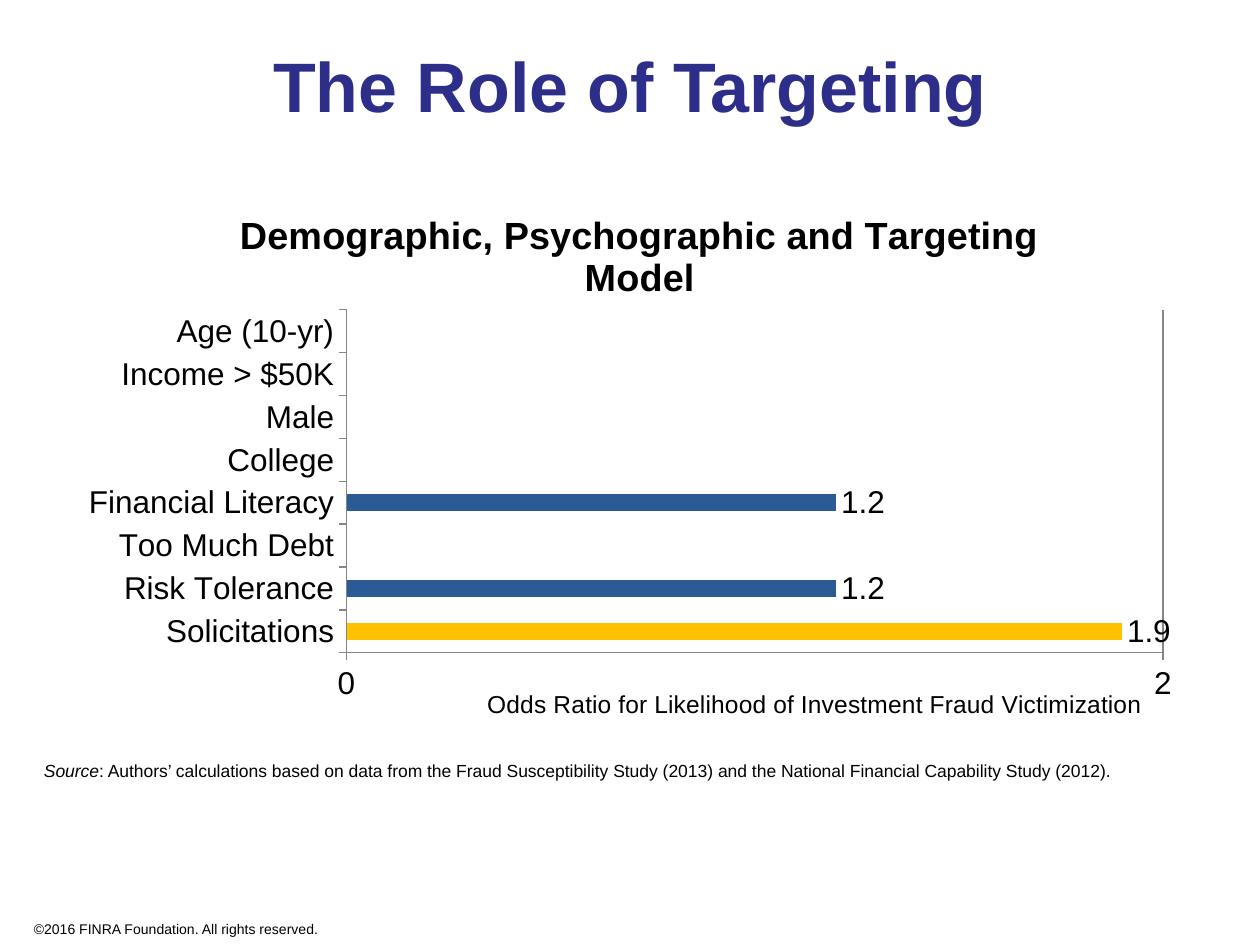
"""Build the slide on the role of targeting, with its odds ratio bar chart."""
from lxml.etree import SubElement
from pptx import Presentation
from pptx.chart.data import CategoryChartData as Data
from pptx.dml.color import RGBColor
from pptx.enum.chart import XL_CHART_TYPE as Kind, XL_LABEL_POSITION as Spot, XL_TICK_MARK as Tick
from pptx.enum.text import MSO_ANCHOR as Anchor, PP_ALIGN as Align
from pptx.oxml.ns import qn
from pptx.util import Inches, Pt

BLACK = RGBColor(0x00, 0x00, 0x00)
NAVY = RGBColor(0x2D, 0x2D, 0x8A)
BLUE = RGBColor(0x2B, 0x5B, 0x95)
GOLD = RGBColor(0xFF, 0xC0, 0x00)
PALE = RGBColor(0xBB, 0xE0, 0xE3)
GRAY = RGBColor(0x86, 0x86, 0x86)


def style(font, color=BLACK, **form):
    font.name = "Arial"
    font.color.rgb = color
    for key, val in form.items():
        setattr(font, key, val)


def place(node, index, **form):
    for old in node.findall(qn("c:layout")):
        node.remove(old)
    layout = SubElement(node, qn("c:layout"))
    node.insert(index, layout)
    manual = SubElement(layout, qn("c:manualLayout"))
    for key, val in form.items():
        SubElement(manual, qn(f"c:{key}")).set("val", str(val))


deck = Presentation()
deck.slide_width, deck.slide_height = Inches(10), Inches(7.5)
slide = deck.slides.add_slide(deck.slide_layouts[5])

title = slide.shapes.title
title.left, title.top, title.width, title.height = map(Inches, (0.5, 0.17, 9, 1))
title.text_frame.vertical_anchor = Anchor.MIDDLE
head = title.text_frame.paragraphs[0]
head.alignment = Align.CENTER
run = head.add_run()
run.text = "The Role of Targeting"
style(run.font, NAVY, size=Pt(40), bold=True)

odds = {
    "Solicitations": 1.9,
    "Risk Tolerance": 1.2,
    "Too Much Debt": None,
    "Financial Literacy": 1.2,
    "College": None,
    "Male": None,
    "Income > $50K": None,
    "Age (10-yr)": None,
}
data = Data()
data.categories = list(odds)
data.add_series("Series 1", list(odds.values()))
chart = slide.shapes.add_chart(
    Kind.BAR_CLUSTERED, Inches(0.5), Inches(1.42), Inches(9), Inches(4.95), data
).chart
style(chart.font, size=Pt(18))
chart.has_legend = False

cats, vals = chart.category_axis, chart.value_axis
vals.has_major_gridlines = True
for axis in (cats, vals):
    axis.major_tick_mark = Tick.OUTSIDE
    axis.minor_tick_mark = Tick.NONE
for line in (cats.format.line, vals.format.line, vals.major_gridlines.format.line):
    line.color.rgb = GRAY
    line.width = Pt(0.75)
for key, val in {"minimum_scale": 0, "maximum_scale": 2, "major_unit": 2}.items():
    setattr(vals, key, val)
vals.tick_labels.number_format = "General"
vals.tick_labels.number_format_is_linked = False

for owner, text, size, bold, left, top in (
    (chart, "Demographic, Psychographic and Targeting Model", 21.6, True, 0.15, 0.04),
    (vals, "Odds Ratio for Likelihood of Investment Fraud Victimization", 14, False, 0.37, 0.81),
):
    owner.has_title = True
    name = owner.chart_title if owner is chart else owner.axis_title
    part = name.text_frame.paragraphs[0].add_run()
    part.text = text
    style(part.font, size=Pt(size), bold=bold)
    place(name.element, 1, xMode="edge", yMode="edge", x=left, y=top)

place(chart.element.chart.plotArea, 0, layoutTarget="inner", xMode="edge",
      yMode="edge", x=0.25, y=0.21, w=0.72, h=0.55)

plot = chart.plots[0]
plot.gap_width = 150
plot.vary_by_categories = False
bars = plot.series[0]
bars.format.fill.solid()
bars.format.fill.fore_color.rgb = PALE
for i, odd in enumerate(odds.values()):
    if odd:
        fill = bars.points[i].format.fill
        fill.solid()
        fill.fore_color.rgb = BLUE if i else GOLD

labels = bars.data_labels
labels.show_value = True
labels.position = Spot.OUTSIDE_END
style(labels.font, size=Pt(18))

for left, top, width, height, size, parts in (
    (0.17, 7.26, 2.83, 0.24, 8, [("©2016 FINRA Foundation. All rights reserved.", False)]),
    (0.25, 5.98, 9.08, 0.27, 10, [
        ("Source", True),
        (": Authors’ calculations based on data from the Fraud Susceptibility Study (2013) "
         "and the National Financial Capability Study (2012).", False),
    ]),
):
    box = slide.shapes.add_textbox(*map(Inches, (left, top, width, height)))
    box.text_frame.word_wrap = True
    for text, slant in parts:
        run = box.text_frame.paragraphs[0].add_run()
        run.text = text
        style(run.font, size=Pt(size), italic=slant)

deck.save("out.pptx")
